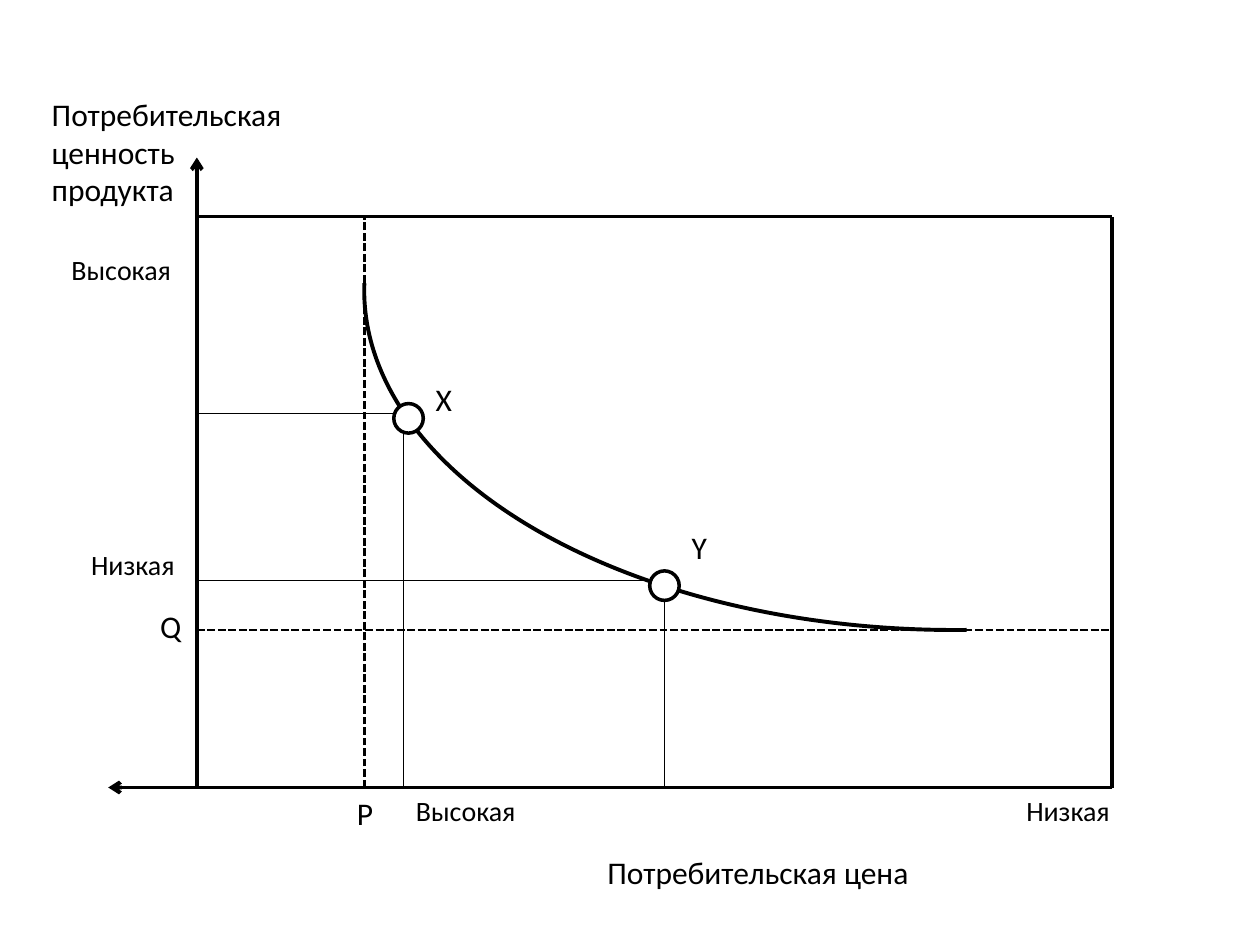
from lxml import etree
from pptx import Presentation
from pptx.dml.color import RGBColor
from pptx.enum.dml import MSO_LINE
from pptx.enum.shapes import MSO_CONNECTOR, MSO_SHAPE
from pptx.enum.text import MSO_AUTO_SIZE, PP_ALIGN
from pptx.oxml.ns import qn
from pptx.util import Inches, Pt

STRAIGHT = MSO_CONNECTOR.STRAIGHT
ARC, OVAL = MSO_SHAPE.ARC, MSO_SHAPE.OVAL
DASH = MSO_LINE.SQUARE_DOT
LEFT, CENTER = PP_ALIGN.LEFT, PP_ALIGN.CENTER

THEME = {
    "font": "Calibri",
    "ink": RGBColor(0, 0, 0),
    "paper": RGBColor(255, 255, 255),
    "title": Pt(18), "scale": Pt(16),
    "frame": Pt(2.25), "marker": Pt(2), "asymptote": Pt(1.5), "guide": Pt(0.75),
}

deck = Presentation()
deck.slide_width, deck.slide_height = Inches(10), Inches(7.5)
page = deck.slides.add_slide(deck.slide_layouts[6])

# Square grid: 128 columns by 96 rows
CELL = deck.slide_width / 128


def grid(*cells):
    return [round(cell * CELL) for cell in cells]


def draw_line(start, end, weight, dash=None, arrow=False):
    line = page.shapes.add_connector(STRAIGHT, *grid(*start, *end))
    line.line.color.rgb = THEME["ink"]
    line.line.width = THEME[weight]
    if dash:
        line.line.dash_style = dash
    properties = line._element.spPr
    if arrow:
        etree.SubElement(properties.find(qn("a:ln")), qn("a:tailEnd"), type="arrow")
    etree.SubElement(properties, qn("a:effectLst"))


# Plot edges and the asymptotes P and Q
left, right, top, bottom = 20, 113, 22, 80
p_column, q_row = 37, 64

# Axes and frame
draw_line((right, bottom), (11, bottom), "frame", arrow=True)
draw_line((left, bottom), (left, 16), "frame", arrow=True)
draw_line((left, top), (right, top), "frame")
draw_line((right, bottom), (right, top), "frame")

# Asymptotes
draw_line((p_column, bottom), (p_column, top), "asymptote", DASH)
draw_line((left, q_row), (right, q_row), "asymptote", DASH)

# Curve: the lower left quarter of an ellipse
curve_width, curve_height = 120, 69
curve = page.shapes.add_shape(
    ARC, *grid(p_column, q_row - curve_height, curve_width, curve_height))
curve.rotation = 180
curve.adjustments[0], curve.adjustments[1] = 160.8, 0.42
curve.fill.background()
curve.line.color.rgb = THEME["ink"]
curve.line.width = THEME["frame"]
curve.shadow.inherit = False

# Points X and Y
for column, row in [(40, 41), (66, 58)]:
    point = page.shapes.add_shape(OVAL, *grid(column, row, 3, 3))
    point.fill.solid()
    point.fill.fore_color.rgb = THEME["paper"]
    point.line.color.rgb = THEME["ink"]
    point.line.width = THEME["marker"]
    point.shadow.inherit = False

# Guides from the points to both axes
for level_end, level, drop, drop_start in [(40, 42, 41, 44), (66, 59, 67.5, 61)]:
    draw_line((left, level), (level_end, level), "guide")
    draw_line((drop, drop_start), (drop, bottom), "guide")

# Labels: text, column, row, width, height, size, alignment
labels = [
    ("Х", 43, 38, 5, 5, "title", LEFT),
    ("Y", 69, 53, 4, 5, "title", LEFT),
    ("Q", 15, 61, 5, 5, "title", LEFT),
    ("P", 35, bottom, 5, 5, "title", LEFT),
    ("Потребительская ценность продукта", 4, 9, 28, 13, "title", LEFT),
    ("Высокая", 6, 25, 15, 4.75, "scale", LEFT),
    ("Низкая", 8, 55, 14, 4.75, "scale", LEFT),
    ("Высокая", 41, bottom, 15, 4.75, "scale", LEFT),
    ("Низкая", 103, bottom, 14, 4.75, "scale", LEFT),
    ("Потребительская цена", 49, 86, 56, 5, "title", CENTER),
]
for text, column, row, width, height, size, alignment in labels:
    box = page.shapes.add_textbox(*grid(column, row, width, height))
    frame = box.text_frame
    frame.word_wrap = True
    frame.auto_size = MSO_AUTO_SIZE.SHAPE_TO_FIT_TEXT
    para = frame.paragraphs[0]
    para.text = text
    para.alignment = alignment
    para.font.name = THEME["font"]
    para.font.size = THEME[size]
    para.font.color.rgb = THEME["ink"]

deck.save("out.pptx")
